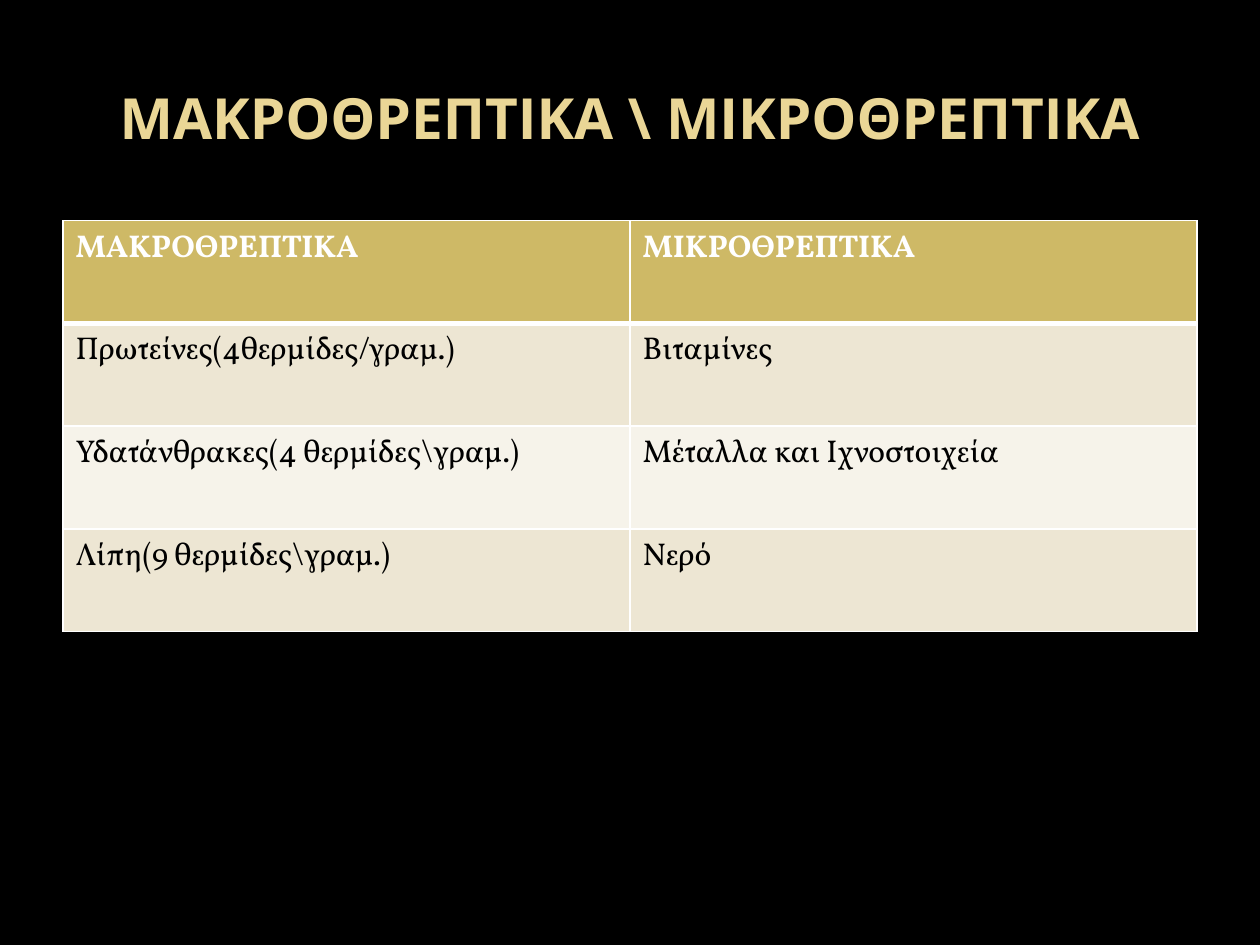
from lxml import etree
from pptx import Presentation
from pptx.dml.color import RGBColor
from pptx.enum.text import MSO_ANCHOR, PP_ALIGN
from pptx.oxml.ns import qn
from pptx.util import Cm, Pt

CENTER, LEFT = PP_ALIGN.CENTER, PP_ALIGN.LEFT
MIDDLE = MSO_ANCHOR.MIDDLE

BLACK = RGBColor(0x00, 0x00, 0x00)
WHITE = RGBColor(0xFF, 0xFF, 0xFF)
PALE_GOLD = RGBColor(0xEA, 0xD6, 0x96)
GOLD = RGBColor(0xCE, 0xB9, 0x66)
SAND = RGBColor(0xED, 0xE6, 0xD3)
CREAM = RGBColor(0xF6, 0xF3, 0xEA)

HEADING = "ΜΑΚΡΟΘΡΕΠΤΙΚΑ \\ ΜΙΚΡΟΘΡΕΠΤΙΚΑ"
NUTRIENTS = [
    ("ΜΑΚΡΟΘΡΕΠΤΙΚΑ", "ΜΙΚΡΟΘΡΕΠΤΙΚΑ"),
    ("Πρωτείνες(4θερμίδες/γραμ.)", "Βιταμίνες"),
    ("Υδατάνθρακες(4 θερμίδες\\γραμ.)", "Μέταλλα και Ιχνοστοιχεία"),
    ("Λίπη(9 θερμίδες\\γραμ.)", "Νερό"),
]


def write_text(frame, text, font, size, color, bold=False, align=LEFT):
    paragraph = frame.paragraphs[0]
    paragraph.alignment = align
    run = paragraph.add_run()
    run.text = text
    run.font.name = font
    run.font.size = Pt(size)
    run.font.bold = bold
    run.font.color.rgb = color


def set_borders(cell, color, **widths):
    properties = cell._tc.get_or_add_tcPr()
    for position, (side, width) in enumerate(widths.items()):
        line = etree.Element(qn(f"a:ln{side}"), w=str(Pt(width)))
        fill = etree.SubElement(line, qn("a:solidFill"))
        etree.SubElement(fill, qn("a:srgbClr"), val=str(color))
        properties.insert(position, line)


class NutritionSlide:
    title_font = "Open Sans"
    body_font = "Vollkorn"
    left = Cm(1.27)
    width = Cm(22.86)

    def __init__(self, presentation):
        self.slide = presentation.slides.add_slide(presentation.slide_layouts[5])
        background = self.slide.background.fill
        background.solid()
        background.fore_color.rgb = BLACK

    def add_title(self, text, top, height, size):
        title = self.slide.shapes.title
        title.left, title.top = self.left, top
        title.width, title.height = self.width, height
        title.text_frame.vertical_anchor = MIDDLE
        write_text(title.text_frame, text, self.title_font, size, PALE_GOLD,
                   bold=True, align=CENTER)

    def add_table(self, rows, top, row_height, size):
        table = self.slide.shapes.add_table(
            len(rows), len(rows[0]), self.left, top,
            self.width, row_height * len(rows)).table
        for row, texts in enumerate(rows):
            header = row == 0
            band = GOLD if header else SAND if row % 2 else CREAM
            for column, text in enumerate(texts):
                cell = table.cell(row, column)
                cell.fill.solid()
                cell.fill.fore_color.rgb = band
                set_borders(cell, WHITE, L=1, R=1,
                            T=3 if row == 1 else 1, B=3 if header else 1)
                write_text(cell.text_frame, text, self.body_font, size,
                           WHITE if header else BLACK, bold=header)


def main():
    presentation = Presentation()
    presentation.slide_width = Cm(25.4)
    presentation.slide_height = Cm(19.05)
    nutrition = NutritionSlide(presentation)
    nutrition.add_title(HEADING, top=Cm(0.76), height=Cm(3.18), size=32.4)
    nutrition.add_table(NUTRIENTS, top=Cm(4.45), row_height=Cm(2.07), size=18)
    presentation.save("out.pptx")


if __name__ == "__main__":
    main()
